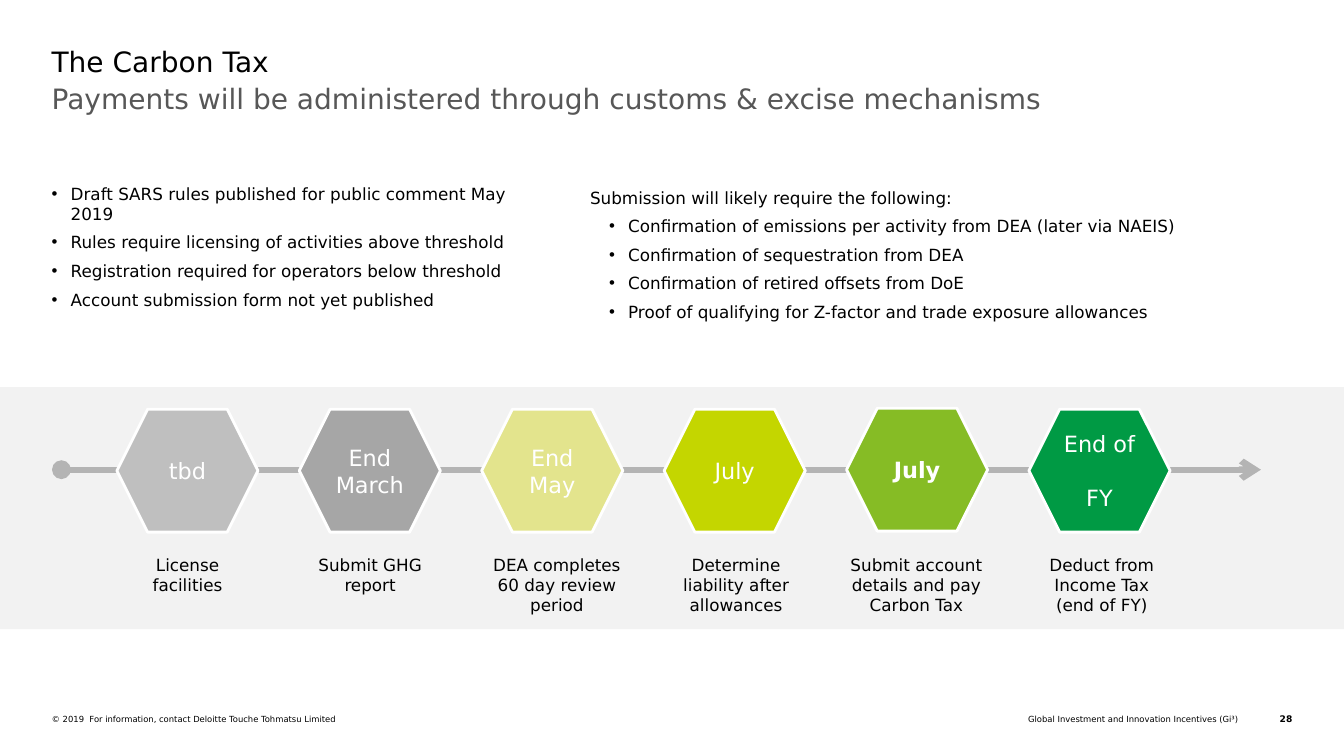
from lxml.etree import SubElement
from pptx import Presentation
from pptx.dml.color import RGBColor
from pptx.enum.shapes import MSO_CONNECTOR as Connector, MSO_SHAPE as Shape
from pptx.enum.text import MSO_ANCHOR as Anchor, PP_ALIGN as Align
from pptx.oxml.ns import qn
from pptx.util import Pt

FONT = "DejaVu Sans"
COLOURS = {
    "text": "000000",
    "subtitle": "575757",
    "band": "F2F2F2",
    "arrow": "B4B4B4",
    "white": "FFFFFF",
    "pale_grey": "BFBFBF",
    "grey": "A6A6A6",
    "pale_lime": "E3E48D",
    "lime": "C4D600",
    "leaf": "86BC25",
    "green": "009A44",
}
BULLET_INDENT = 13.6
STEP_LEFT, STEP_TOP, STEP_PITCH = 83.5, 292.3, 130.3
STEP_WIDTH, STEP_HEIGHT = 100.8, 87.8
CAPTION_TOP, CAPTION_HEIGHT = 392.4, 51

STEPS = [
    (["tbd"], "pale_grey", "License facilities", 82, 104),
    (["End", "March"], "grey", "Submit GHG report", 212.4, 104),
    (["End May"], "pale_lime", "DEA completes 60 day review period", 342.8, 110),
    (["July"], "lime", "Determine liability after allowances", 473.8, 104),
    (["July"], "leaf", "Submit account details and pay Carbon Tax", 599.8, 109.5),
    (["End of", "FY"], "green", "Deduct from Income Tax (end of FY)", 735, 104),
]
RULES = [
    "Draft SARS rules published for public comment May 2019",
    "Rules require licensing of activities above threshold",
    "Registration required for operators below threshold",
    "Account submission form not yet published",
]
REQUIREMENTS = [
    "Confirmation of emissions per activity from DEA (later via NAEIS)",
    "Confirmation of sequestration from DEA",
    "Confirmation of retired offsets from DoE",
    "Proof of qualifying for Z-factor and trade exposure allowances",
]


def colour(name):
    return RGBColor.from_string(COLOURS[name])


class SlideBuilder:
    def __init__(self, slide):
        self.slide = slide

    def fill_text(self, frame, lines, size=12, ink="text", bold=False,
                  align=Align.LEFT, after=0, gap=0, levels=None):
        frame.word_wrap = True
        for index, line in enumerate(lines):
            paragraph = frame.paragraphs[0] if index == 0 else frame.add_paragraph()
            paragraph.alignment = align
            paragraph.space_after = Pt(after)
            if index and gap:
                paragraph.space_before = Pt(gap)
            if levels and levels[index]:
                self.bullet(paragraph, levels[index])
            run = paragraph.add_run()
            run.text = line
            run.font.name = FONT
            run.font.size = Pt(size)
            run.font.bold = bold
            run.font.color.rgb = colour(ink)

    def bullet(self, paragraph, level):
        paragraph.level = level - 1
        properties = paragraph._p.get_or_add_pPr()
        properties.set("marL", str(Pt(BULLET_INDENT * level)))
        properties.set("indent", str(-Pt(BULLET_INDENT)))
        SubElement(properties, qn("a:buFont"), typeface="Arial")
        SubElement(properties, qn("a:buChar"), char="•")

    def text(self, left, top, width, height, lines, inset=True, **style):
        box = self.slide.shapes.add_textbox(Pt(left), Pt(top), Pt(width), Pt(height))
        frame = box.text_frame
        if not inset:
            frame.margin_left = frame.margin_right = 0
            frame.margin_top = frame.margin_bottom = 0
        self.fill_text(frame, lines, **style)

    def shape(self, kind, left, top, width, height, fill, outline=None):
        shape = self.slide.shapes.add_shape(
            kind, Pt(left), Pt(top), Pt(width), Pt(height))
        shape.shadow.inherit = False
        shape.fill.solid()
        shape.fill.fore_color.rgb = colour(fill)
        if outline:
            shape.line.color.rgb = colour(outline)
            shape.line.width = Pt(2)
        else:
            shape.line.fill.background()
        return shape

    def hexagon(self, left, top, lines, fill, **style):
        shape = self.shape(Shape.HEXAGON, left, top, STEP_WIDTH, STEP_HEIGHT,
                           fill, "white")
        shape.adjustments[0] = 0.25
        shape.text_frame.vertical_anchor = Anchor.MIDDLE
        self.fill_text(shape.text_frame, lines, size=16, ink="white",
                       align=Align.CENTER, **style)

    def arrow(self, start, end, height):
        connector = self.slide.shapes.add_connector(
            Connector.STRAIGHT, Pt(start), Pt(height), Pt(end), Pt(height))
        connector.line.color.rgb = colour("arrow")
        connector.line.width = Pt(4.5)
        line = connector.line._get_or_add_ln()
        SubElement(line, qn("a:headEnd"), type="oval")
        SubElement(line, qn("a:tailEnd"), type="arrow")
        SubElement(connector._element.spPr, qn("a:effectLst"))


def main():
    presentation = Presentation()
    presentation.slide_width, presentation.slide_height = Pt(960), Pt(540)
    slide = presentation.slides.add_slide(presentation.slide_layouts[6])
    builder = SlideBuilder(slide)

    builder.text(36.9, 31.7, 886, 26.6, ["The Carbon Tax"], inset=False, size=20)
    builder.text(36.9, 58.3, 886, 60,
                 ["Payments will be administered through customs & excise mechanisms"],
                 inset=False, size=20, ink="subtitle")

    builder.text(36.9, 131, 341.3, 120, RULES, inset=False, after=6,
                 levels=[1] * len(RULES))
    builder.text(414.4, 130.3, 480, 124.6,
                 ["Submission will likely require the following:"] + REQUIREMENTS,
                 after=6, levels=[0] + [2] * len(REQUIREMENTS))

    builder.shape(Shape.RECTANGLE, 0, 276.5, 960, 173, "band")
    builder.arrow(43.9, 900.7, 335.5)
    for index, (lines, fill, caption, left, width) in enumerate(STEPS):
        paying = fill == "leaf"
        builder.hexagon(STEP_LEFT + index * STEP_PITCH,
                        STEP_TOP - 0.7 * paying, lines, fill, bold=paying,
                        gap=19.5 if fill == "green" else 0)
        builder.text(left, CAPTION_TOP, width, CAPTION_HEIGHT, [caption],
                     align=Align.CENTER)

    builder.text(36.9, 509.8, 422, 7.2,
                 ["© 2019  For information, contact Deloitte Touche Tohmatsu Limited"],
                 inset=False, size=6)
    builder.text(499, 509.8, 385.2, 7.2,
                 ["Global Investment and Innovation Incentives (Gi³)"],
                 inset=False, size=6, align=Align.RIGHT)
    builder.text(898.6, 509.8, 24.5, 7.9, ["28"], inset=False, size=6.5,
                 bold=True, align=Align.RIGHT)

    presentation.save("out.pptx")


if __name__ == "__main__":
    main()
